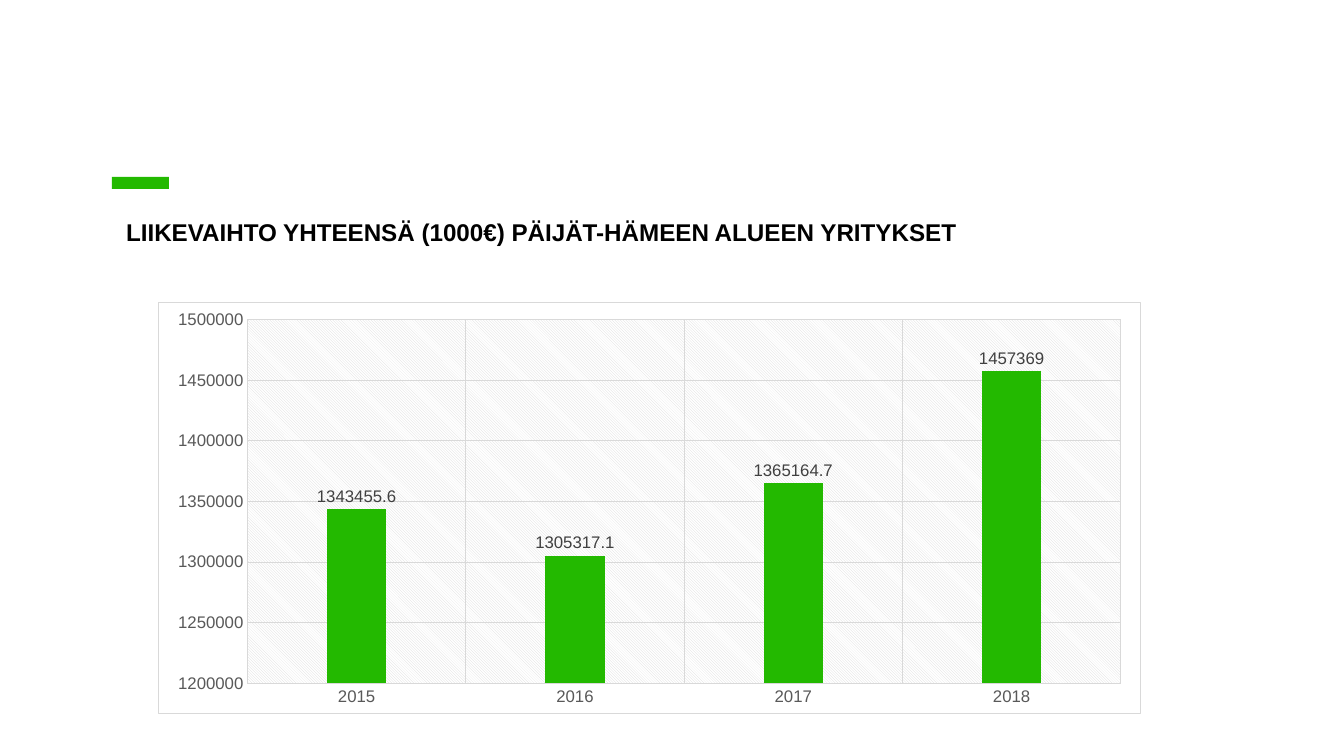
from lxml.etree import fromstring
from pptx import Presentation
from pptx.chart.data import CategoryChartData
from pptx.dml.color import RGBColor
from pptx.enum.chart import XL_CHART_TYPE, XL_LABEL_POSITION, XL_TICK_MARK
from pptx.enum.shapes import MSO_SHAPE
from pptx.enum.text import MSO_ANCHOR, MSO_AUTO_SIZE, PP_ALIGN
from pptx.util import Pt

EMU_PER_PX = 914400 / 100.8
GREEN, GRID = "23B900", "D9D9D9"
NS = ('xmlns:c="http://schemas.openxmlformats.org/drawingml/2006/chart" '
      'xmlns:a="http://schemas.openxmlformats.org/drawingml/2006/main"')


def px(*lengths):
    return [round(length * EMU_PER_PX) for length in lengths]


def paint(target, color):
    target.solid()
    target.fore_color.rgb = RGBColor.from_string(color)


deck = Presentation()
deck.slide_width, deck.slide_height = px(1344, 756)
slide = deck.slides.add_slide(deck.slide_layouts[5])

accent = slide.shapes.add_shape(MSO_SHAPE.RECTANGLE, *px(112, 177, 57, 12))
accent.shadow.inherit = False
paint(accent.fill, GREEN)
accent.line.fill.background()

heading = slide.shapes.title
heading.left, heading.top, heading.width, heading.height = px(116, 225, 1159, 51)
heading_frame = heading.text_frame
heading_frame.text = "LIIKEVAIHTO YHTEENSÄ (1000€) PÄIJÄT-HÄMEEN ALUEEN YRITYKSET"
frame_format = {"auto_size": MSO_AUTO_SIZE.NONE, "word_wrap": True,
                "vertical_anchor": MSO_ANCHOR.TOP, "margin_top": 0}
for name, value in frame_format.items():
    setattr(heading_frame, name, value)
heading_line = heading_frame.paragraphs[0]
heading_line.alignment = PP_ALIGN.LEFT
heading_line.line_spacing = 0.7

revenue = CategoryChartData()
revenue.categories = ["2015", "2016", "2017", "2018"]
revenue.add_series("Series 1", [1343455.6, 1305317.1, 1365164.7, 1457369])
chart = slide.shapes.add_chart(
    XL_CHART_TYPE.COLUMN_CLUSTERED, *px(158, 302, 983, 412), revenue).chart
chart.has_legend = False
chart.has_title = False

columns = chart.plots[0]
columns.gap_width, columns.overlap = 267, -43
columns.vary_by_categories = False
paint(columns.series[0].format.fill, GREEN)
columns.has_data_labels = True
labels = columns.data_labels
label_format = {"show_value": True, "position": XL_LABEL_POSITION.OUTSIDE_END,
                "number_format": "General", "number_format_is_linked": False}
for name, value in label_format.items():
    setattr(labels, name, value)

years, amounts = chart.category_axis, chart.value_axis
for axis in (years, amounts):
    axis.major_tick_mark = axis.minor_tick_mark = XL_TICK_MARK.NONE
    axis.has_major_gridlines = True
    for line in (axis.format.line, axis.major_gridlines.format.line):
        paint(line.fill, GRID)
        line.width = Pt(0.75)
amounts.format.line.fill.background()
scale_format = {"minimum_scale": 1200000, "maximum_scale": 1500000, "major_unit": 50000}
for name, value in scale_format.items():
    setattr(amounts, name, value)

fonts = [
    (heading_line.runs[0].font, 17.3, "000000", True),
    (chart.font, 10, "595959", False),
    (years.tick_labels.font, 12, "595959", False),
    (amounts.tick_labels.font, 12, "595959", False),
    (labels.font, 12, "404040", False),
]
for font, size, color, bold in fonts:
    for name, value in {"name": "Arial", "size": Pt(size), "bold": bold}.items():
        setattr(font, name, value)
    paint(font.fill, color)

chart_space = chart.element
chart_space.chart.plotArea.append(fromstring(
    f'<c:spPr {NS}><a:pattFill prst="ltDnDiag">'
    f'<a:fgClr><a:srgbClr val="{GRID}"/></a:fgClr>'
    '<a:bgClr><a:srgbClr val="FFFFFF"/></a:bgClr></a:pattFill>'
    '<a:ln><a:noFill/></a:ln></c:spPr>'))
chart_space.chart.addnext(fromstring(
    f'<c:spPr {NS}><a:solidFill><a:srgbClr val="FFFFFF"/></a:solidFill>'
    f'<a:ln w="9525"><a:solidFill><a:srgbClr val="{GRID}"/></a:solidFill></a:ln></c:spPr>'))

deck.save("out.pptx")
